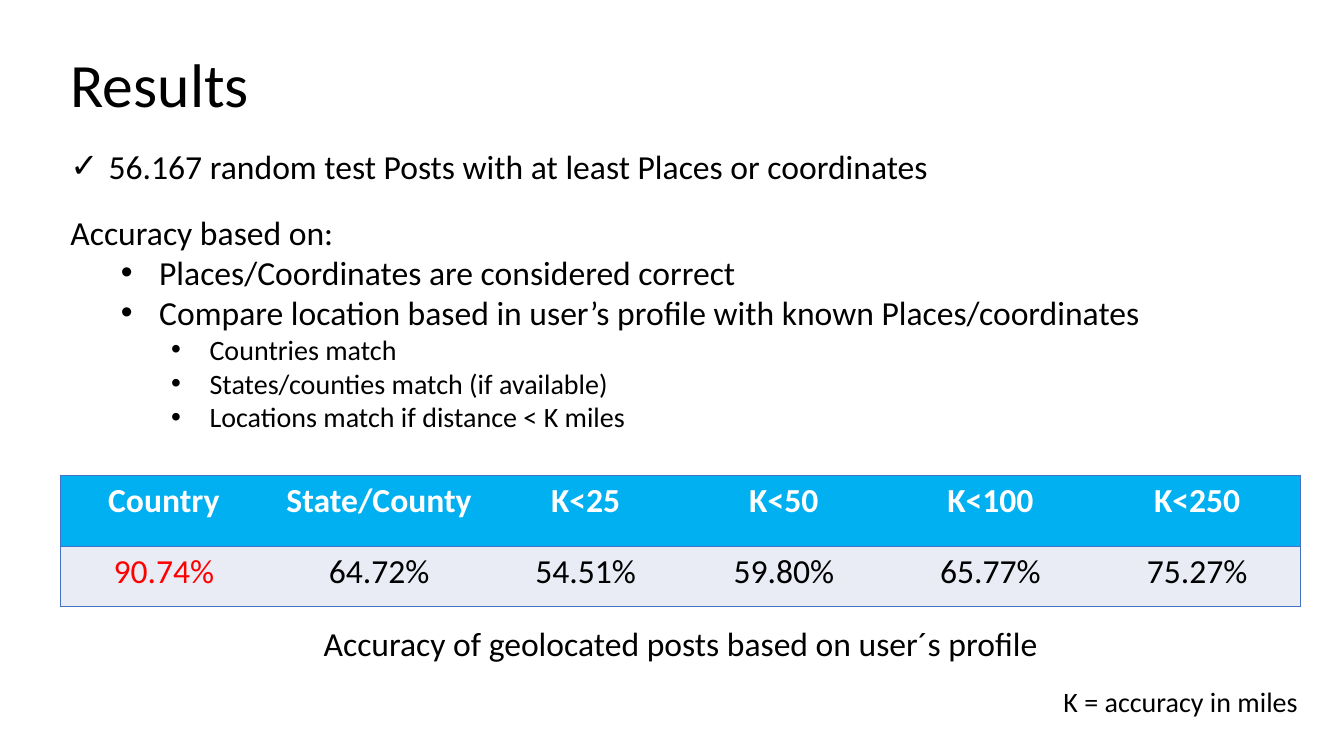
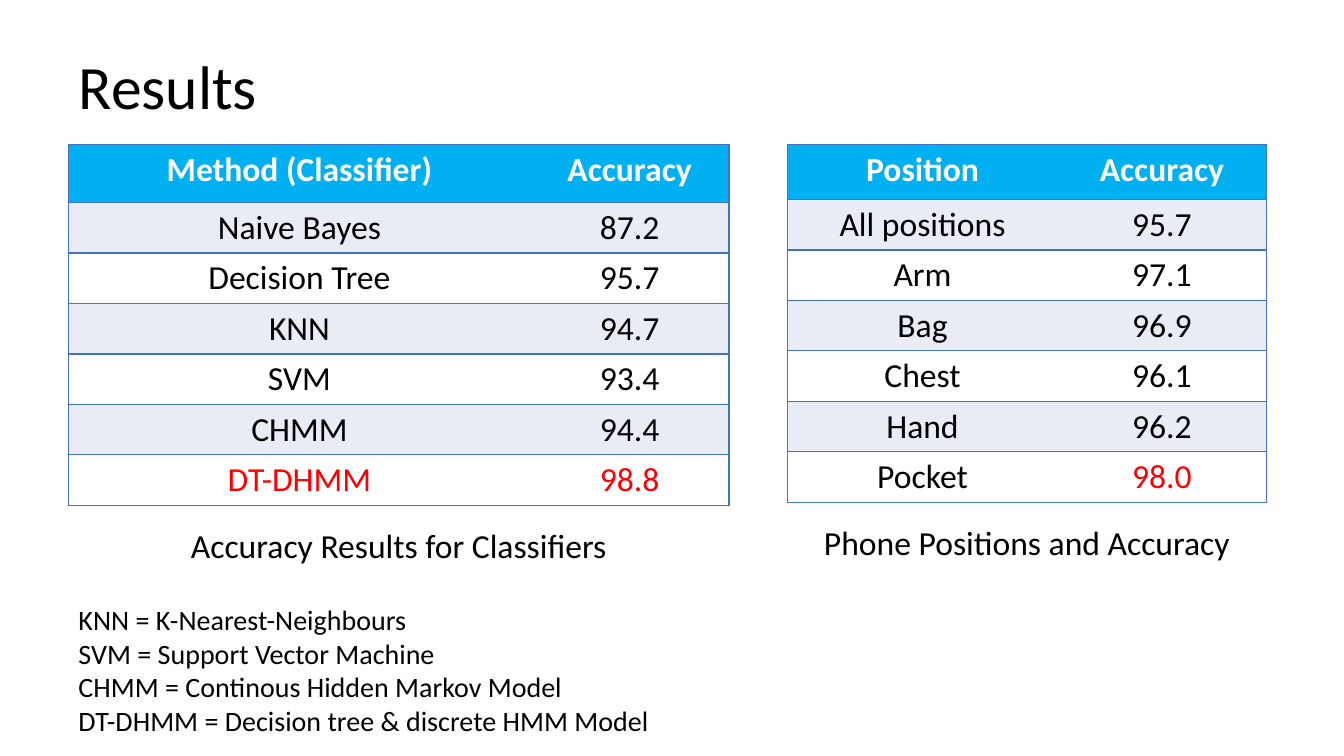
from dataclasses import dataclass

from lxml import etree
from pptx import Presentation
from pptx.dml.color import RGBColor
from pptx.enum.text import MSO_ANCHOR, MSO_AUTO_SIZE, PP_ALIGN
from pptx.oxml.ns import qn
from pptx.util import Inches, Pt

LEFT, CENTER = PP_ALIGN.LEFT, PP_ALIGN.CENTER
TOP = MSO_ANCHOR.TOP
NO_AUTOFIT = MSO_AUTO_SIZE.NONE
TITLE_ONLY = 5


@dataclass(frozen=True)
class Theme:
    font: str = "Calibri"
    text: str = "000000"
    header_text: str = "FFFFFF"
    highlight: str = "FF0000"
    header_fill: str = "00B0F0"
    band_fills: tuple = ("E9EBF5", "FFFFFF")
    border: str = "4472C4"
    border_width: int = 1
    title_size: int = 44
    body_size: int = 24
    small_size: int = 20


THEME = Theme()
SLIDE_SIZE = (13.33, 7.5)
BULLET_HANG = 0.38
LEVEL_STEP = 0.5
CAPTION_HEIGHT = 0.5
BODY, SMALL = THEME.body_size, THEME.small_size

# Boxes are (left, top, width, height) in inches.
# Paragraphs are (text, size, level, bullet).
# Highlights are (row, column) positions, counting the header as row 0.
SLIDES = [
    {
        "title": ("Results", (0.6, 0.41, 2.5, 0.84)),
        "texts": [
            ((0.6, 1.4, 8.97, 0.5), LEFT, [
                ("56.167 random test Posts with at least Places or coordinates",
                 BODY, 0, "✓"),
            ]),
            ((0.6, 2.05, 11.48, 2.3), LEFT, [
                ("Accuracy based on:", BODY, 0, None),
                ("Places/Coordinates are considered correct", BODY, 1, "•"),
                ("Compare location based in user’s profile with known "
                 "Places/coordinates", BODY, 1, "•"),
                ("Countries match", SMALL, 2, "•"),
                ("States/counties match (if available)", SMALL, 2, "•"),
                ("Locations match if distance < K miles", SMALL, 2, "•"),
            ]),
            ((10.3, 6.74, 2.82, 0.44), CENTER, [
                ("K = accuracy in miles", SMALL, 0, None),
            ]),
        ],
        "tables": [{
            "position": (0.6, 4.72),
            "columns": (2.05, 2.22, 1.88, 2.05, 2.05, 2.05),
            "header_height": 0.7,
            "row_height": 0.6,
            "rows": [
                ("Country", "State/County", "K<25", "K<50", "K<100", "K<250"),
                ("90.74%", "64.72%", "54.51%", "59.80%", "65.77%", "75.27%"),
            ],
            "highlights": {(1, 0)},
            "caption": "Accuracy of geolocated posts based on user´s profile",
            "caption_gap": 0.11,
        }],
    },
    {
        "title": ("Results", (0.68, 0.43, 2.5, 0.84)),
        "texts": [
            ((0.68, 5.93, 5.91, 1.45), LEFT, [
                ("KNN = K-Nearest-Neighbours", SMALL, 0, None),
                ("SVM = Support Vector Machine", SMALL, 0, None),
                ("CHMM = Continous Hidden Markov Model", SMALL, 0, None),
                ("DT-DHMM = Decision tree & discrete HMM Model", SMALL, 0, None),
            ]),
        ],
        "tables": [
            {
                "position": (0.68, 1.43),
                "columns": (4.58, 1.97),
                "header_height": 0.58,
                "row_height": 0.5,
                "rows": [
                    ("Method (Classifier)", "Accuracy"),
                    ("Naive Bayes", "87.2"),
                    ("Decision Tree", "95.7"),
                    ("KNN", "94.7"),
                    ("SVM", "93.4"),
                    ("CHMM", "94.4"),
                    ("DT-DHMM", "98.8"),
                ],
                "highlights": {(6, 0), (6, 1)},
                "caption": "Accuracy Results for Classifiers",
                "caption_gap": 0.15,
            },
            {
                "position": (7.81, 1.43),
                "columns": (2.68, 2.07),
                "header_height": 0.55,
                "row_height": 0.5,
                "rows": [
                    ("Position", "Accuracy"),
                    ("All positions", "95.7"),
                    ("Arm", "97.1"),
                    ("Bag", "96.9"),
                    ("Chest", "96.1"),
                    ("Hand", "96.2"),
                    ("Pocket", "98.0"),
                ],
                "highlights": {(6, 1)},
                "caption": "Phone Positions and Accuracy",
                "caption_gap": 0.15,
            },
        ],
    },
]


def format_paragraph(paragraph, size, color=THEME.text, bold=False, align=LEFT):
    paragraph.alignment = align
    font = paragraph.font
    font.name = THEME.font
    font.size = Pt(size)
    font.bold = bold
    font.color.rgb = RGBColor.from_string(color)


def add_bullet(paragraph, bullet, level):
    properties = paragraph._p.get_or_add_pPr()
    properties.set("marL", str(Inches(BULLET_HANG + level * LEVEL_STEP)))
    properties.set("indent", str(-Inches(BULLET_HANG)))
    etree.SubElement(properties, qn("a:buFont")).set("typeface", "Arial")
    etree.SubElement(properties, qn("a:buChar")).set("char", bullet)


def add_title(slide, text, box):
    title = slide.shapes.title
    title.left, title.top, title.width, title.height = map(Inches, box)
    frame = title.text_frame
    frame.text = text
    frame.auto_size = NO_AUTOFIT
    frame.vertical_anchor = TOP
    format_paragraph(frame.paragraphs[0], THEME.title_size)


def add_text(slide, box, align, paragraphs):
    frame = slide.shapes.add_textbox(*map(Inches, box)).text_frame
    frame.word_wrap = True
    for index, (text, size, level, bullet) in enumerate(paragraphs):
        paragraph = frame.add_paragraph() if index else frame.paragraphs[0]
        paragraph.text = text
        paragraph.level = level
        if bullet:
            add_bullet(paragraph, bullet, level)
        format_paragraph(paragraph, size, align=align)


def set_borders(cell, visible):
    """Draw the visible sides of a cell and clear the others."""
    properties = cell._tc.get_or_add_tcPr()
    for index, side in enumerate("LRTB"):
        line = etree.Element(qn(f"a:ln{side}"), w=str(Pt(THEME.border_width)))
        if side in visible:
            fill = etree.SubElement(line, qn("a:solidFill"))
            etree.SubElement(fill, qn("a:srgbClr")).set("val", THEME.border)
        else:
            etree.SubElement(line, qn("a:noFill"))
        properties.insert(index, line)


def format_cell(cell, text, row, highlighted):
    is_header = row == 0
    band = THEME.band_fills[(row - 1) % len(THEME.band_fills)]
    cell.fill.solid()
    cell.fill.fore_color.rgb = RGBColor.from_string(
        THEME.header_fill if is_header else band)
    cell.text = text
    color = THEME.header_text if is_header else THEME.text
    format_paragraph(cell.text_frame.paragraphs[0], BODY,
                     THEME.highlight if highlighted else color, is_header, CENTER)


def add_captioned_table(slide, content):
    rows, columns = content["rows"], content["columns"]
    heights = [content["header_height"]] + [content["row_height"]] * (len(rows) - 1)
    left, top = content["position"]
    width, height = sum(columns), sum(heights)
    table = slide.shapes.add_table(
        len(rows), len(columns), *map(Inches, (left, top, width, height))).table
    table.first_row = table.horz_banding = False
    for column, column_width in zip(table.columns, columns):
        column.width = Inches(column_width)
    for row, row_height in zip(table.rows, heights):
        row.height = Inches(row_height)

    last_column = len(columns) - 1
    for row, values in enumerate(rows):
        for column, value in enumerate(values):
            cell = table.cell(row, column)
            format_cell(cell, value, row, (row, column) in content["highlights"])
            outer = {0: "L", last_column: "R"}.get(column, "")
            set_borders(cell, "TB" + outer)

    caption_top = top + height + content["caption_gap"]
    add_text(slide, (left, caption_top, width, CAPTION_HEIGHT), CENTER,
             [(content["caption"], BODY, 0, None)])


def main():
    presentation = Presentation()
    presentation.slide_width, presentation.slide_height = map(Inches, SLIDE_SIZE)
    for content in SLIDES:
        slide = presentation.slides.add_slide(presentation.slide_layouts[TITLE_ONLY])
        add_title(slide, *content["title"])
        for text in content["texts"]:
            add_text(slide, *text)
        for table in content["tables"]:
            add_captioned_table(slide, table)
    presentation.save("out.pptx")


if __name__ == "__main__":
    main()
